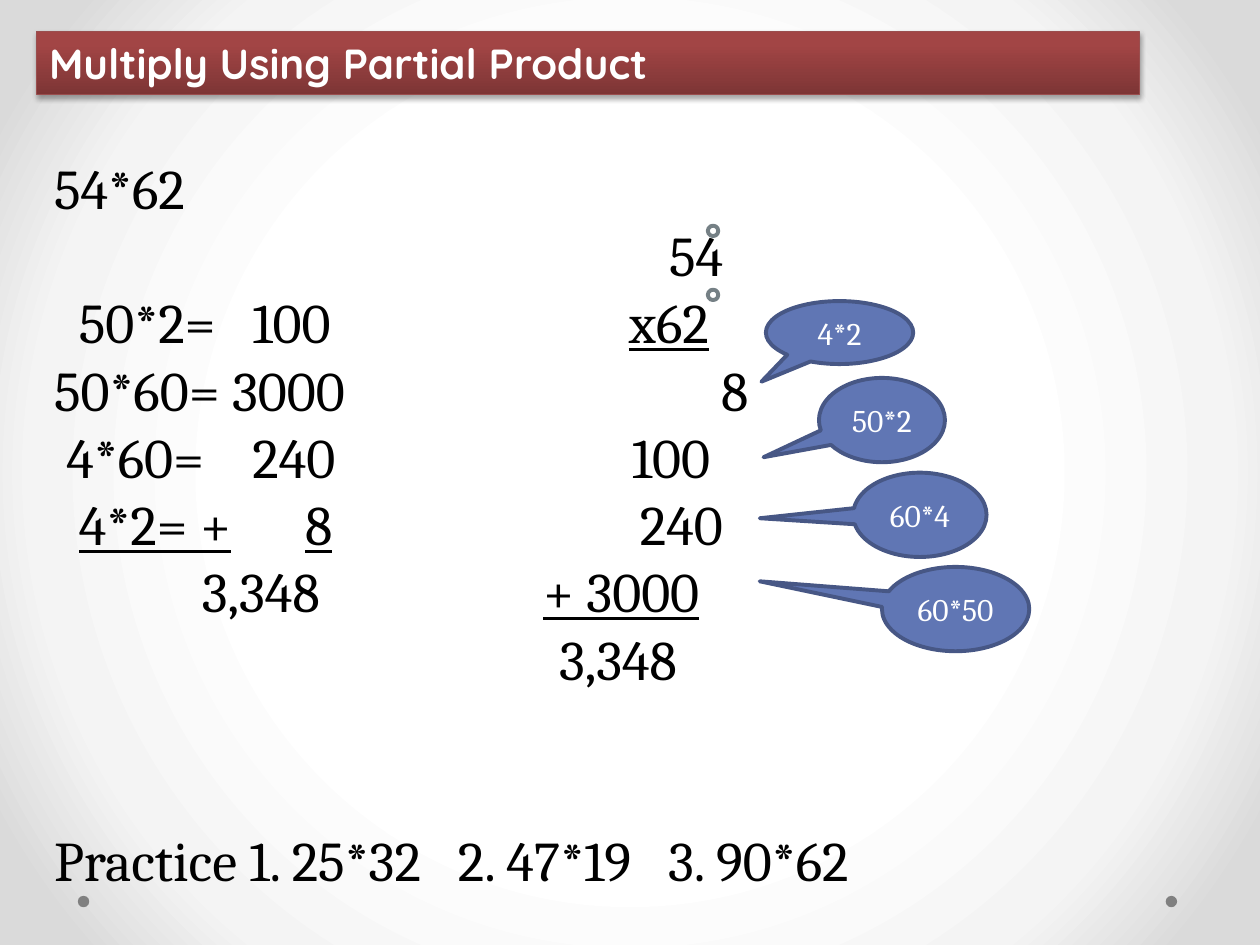
from lxml.etree import SubElement
from pptx import Presentation
from pptx.dml.color import RGBColor
from pptx.enum.shapes import MSO_SHAPE
from pptx.enum.text import MSO_ANCHOR, PP_ALIGN
from pptx.oxml import parse_xml
from pptx.oxml.ns import nsdecls, qn
from pptx.util import Cm, Pt

BLACK = RGBColor(0x00, 0x00, 0x00)
WHITE = RGBColor(0xFF, 0xFF, 0xFF)
GREY = RGBColor(0x80, 0x80, 0x80)
RING = RGBColor(0x75, 0x80, 0x85)
BLUE = RGBColor(0x60, 0x76, 0xB4)
BLUE_EDGE = RGBColor(0x47, 0x57, 0x85)
RED_EDGE = RGBColor(0x9A, 0x4E, 0x4E)

# Gradient stops: percent, colour
BACKDROP = [(50, WHITE), (76, RGBColor(0xF4, 0xF4, 0xF4)), (92, RGBColor(0xDA, 0xDA, 0xDA))]
BANNER = [(0, RGBColor(0x7D, 0x35, 0x35)), (80, RGBColor(0xA2, 0x45, 0x45)),
          (100, RGBColor(0xA4, 0x43, 0x43))]
RADIAL = ('<a:path {} path="circle"><a:fillToRect l="50000" t="50000" r="50000" b="50000"/>'
          '</a:path>')
UPWARD = '<a:lin {} ang="16200000" scaled="0"/>'

TITLE = "Multiply Using Partial Product"

# Worked rows: tab stops in cm, runs as (text, underlined), lines skipped above
ROWS = [
    ([], [("54*62", False)], 0),
    ([12.4], [("\t54", False)], 0),
    ([0.5, 4, 11.59, 13.47], [("\t50*2=\t100\t", False), ("x62\t", True)], 0),
    ([13.45], [("50*60= 3000\t8", False)], 0),
    ([0.25, 4, 11.65], [("\t4*60=\t240\t100", False)], 0),
    ([0.5, 5.06, 6.61, 11.81], [("\t4*2= +\t8\t", True), ("\t240", False)], 0),
    ([2.98, 9.86, 13.25], [("\t3,348\t", False), ("+ 3000\t", True)], 0),
    ([10.18], [("\t3,348", False)], 0),
    ([8.14, 12.38], [("Practice 1. 25*32\t2. 47*19\t3. 90*62", False)], 2),
]
LINE_PT = 38.4

# Callouts: text, left, top, width, height in cm, pointer tip
CALLOUTS = [
    ("4*2", 15.44, 6.07, 2.97, 1.27, (-0.53, 0.78)),
    ("50*2", 16.51, 7.62, 2.54, 1.7, (-0.94, 0.44)),
    ("60*4", 17.2, 9.53, 2.69, 1.7, (-1.2, 0.04)),
    ("60*50", 17.78, 11.43, 2.97, 1.7, (-1.33, -0.33)),
]
DOTS = [(23.5, 18.06), (1.57, 18.06)]
RINGS = [(14.27, 4.55), (14.27, 5.84)]


def set_gradient(fill, element, stops, direction):
    fill.gradient()
    grad = element.find(".//" + qn("a:gradFill"))
    for child in list(grad):
        grad.remove(child)
    gs_list = SubElement(grad, qn("a:gsLst"))
    for percent, color in stops:
        gs = SubElement(gs_list, qn("a:gs"), pos=str(percent * 1000))
        SubElement(gs, qn("a:srgbClr"), val=str(color))
    grad.append(parse_xml(direction.format(nsdecls("a"))))


def add_shape(kind, left, top, width, height, fill=None, line=None, line_pt=2.25):
    sp = s.shapes.add_shape(kind, Cm(left), Cm(top), Cm(width), Cm(height))
    sp.shadow.inherit = False
    if fill is not None:
        sp.fill.solid()
        sp.fill.fore_color.rgb = fill
    if line is None:
        sp.line.fill.background()
    else:
        sp.line.color.rgb = line
        sp.line.width = Pt(line_pt)
    return sp


def add_run(p, text, size, color, font="Cambria", bold=None, underline=None):
    r = p.add_run()
    r.text = text
    r.font.name, r.font.size = font, Pt(size)
    r.font.bold, r.font.underline = bold, underline
    r.font.color.rgb = color


prs = Presentation()
prs.slide_width, prs.slide_height = Cm(25.4), Cm(19.05)
s = prs.slides.add_slide(prs.slide_layouts[6])
set_gradient(s.background.fill, s._element, BACKDROP, RADIAL)

# Footer dots
for left, top in DOTS:
    add_shape(MSO_SHAPE.OVAL, left, top, 0.23, 0.23, GREY)

# Worked example, columns held by tab stops
tf = s.shapes.add_textbox(Cm(0.84), Cm(2.97), Cm(23.06), Cm(16.66)).text_frame
tf.word_wrap = True
for i, (stops, runs, skipped) in enumerate(ROWS):
    p = tf.paragraphs[0] if i == 0 else tf.add_paragraph()
    p.space_before = Pt(skipped * LINE_PT)
    if stops:
        tabs = SubElement(p._p.get_or_add_pPr(), qn("a:tabLst"))
        for stop in stops:
            SubElement(tabs, qn("a:tab"), pos=str(int(Cm(stop))), algn="l")
    for text, underlined in runs:
        add_run(p, text, 32, BLACK, underline=underlined)

# Title banner
sp = add_shape(MSO_SHAPE.RECTANGLE, 0.74, 0.64, 22.23, 1.27, line=RED_EDGE, line_pt=0.75)
set_gradient(sp.fill, sp._element, BANNER, UPWARD)
shadow = SubElement(sp._element.spPr.find(qn("a:effectLst")), qn("a:outerShdw"),
                    blurRad=str(Pt(3.1)), dist=str(Pt(1.8)), dir="5400000", rotWithShape="0")
SubElement(SubElement(shadow, qn("a:srgbClr"), val=str(BLACK)), qn("a:alpha"), val="35000")
tf = sp.text_frame
tf.vertical_anchor = MSO_ANCHOR.TOP
p = tf.paragraphs[0]
p.alignment = PP_ALIGN.LEFT
add_run(p, TITLE, 24, WHITE, "Quicksand", bold=True)

# Small rings
for left, top in RINGS:
    add_shape(MSO_SHAPE.FLOWCHART_CONNECTOR, left, top, 0.21, 0.21, WHITE, RING)

# Callouts naming each partial product
for text, left, top, width, height, tip in CALLOUTS:
    sp = add_shape(MSO_SHAPE.OVAL_CALLOUT, left, top, width, height, BLUE, BLUE_EDGE)
    sp.adjustments[0], sp.adjustments[1] = tip
    tf = sp.text_frame
    tf.vertical_anchor = MSO_ANCHOR.MIDDLE
    p = tf.paragraphs[0]
    p.alignment = PP_ALIGN.CENTER
    add_run(p, text, 18, WHITE)

prs.save("out.pptx")
